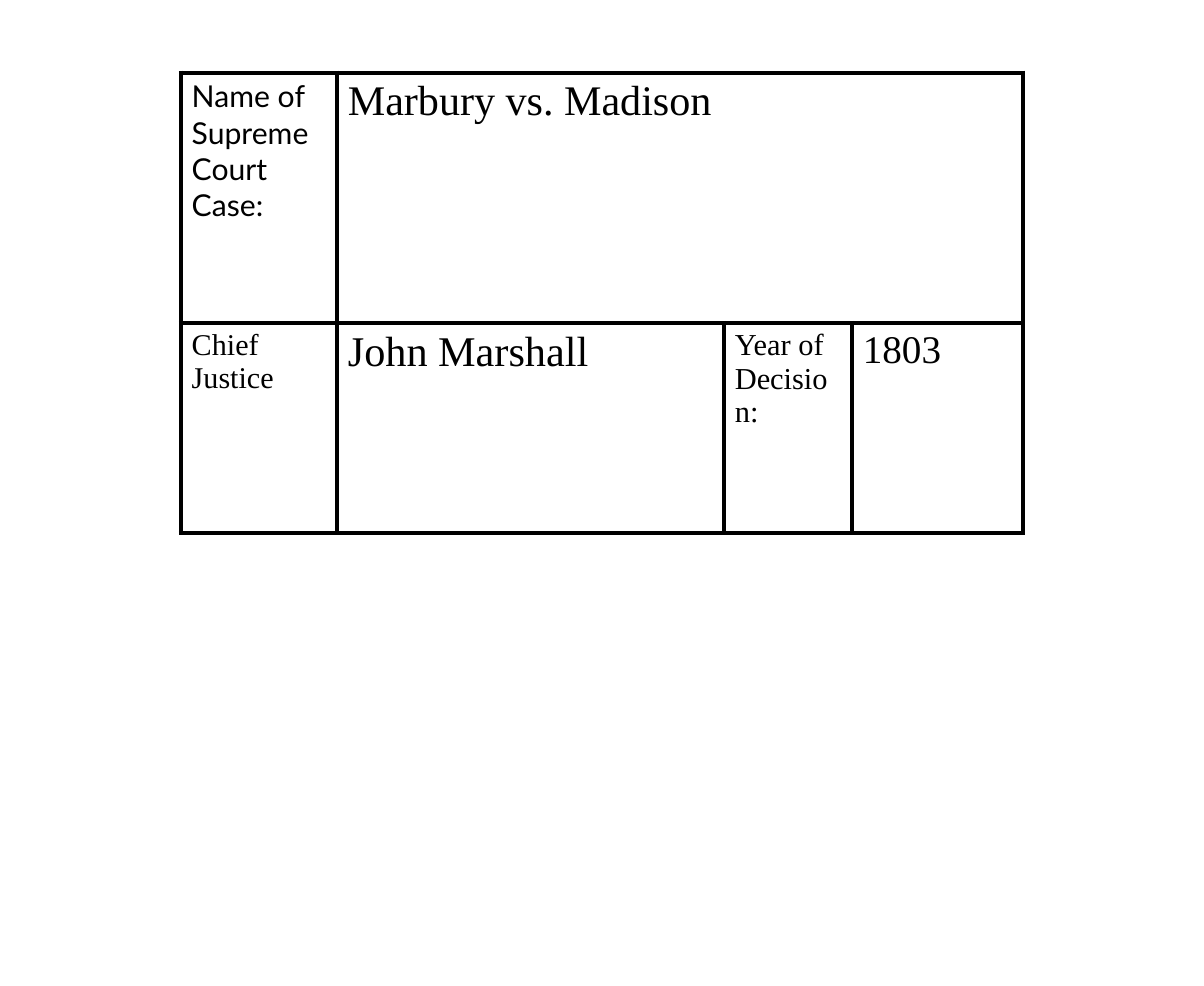
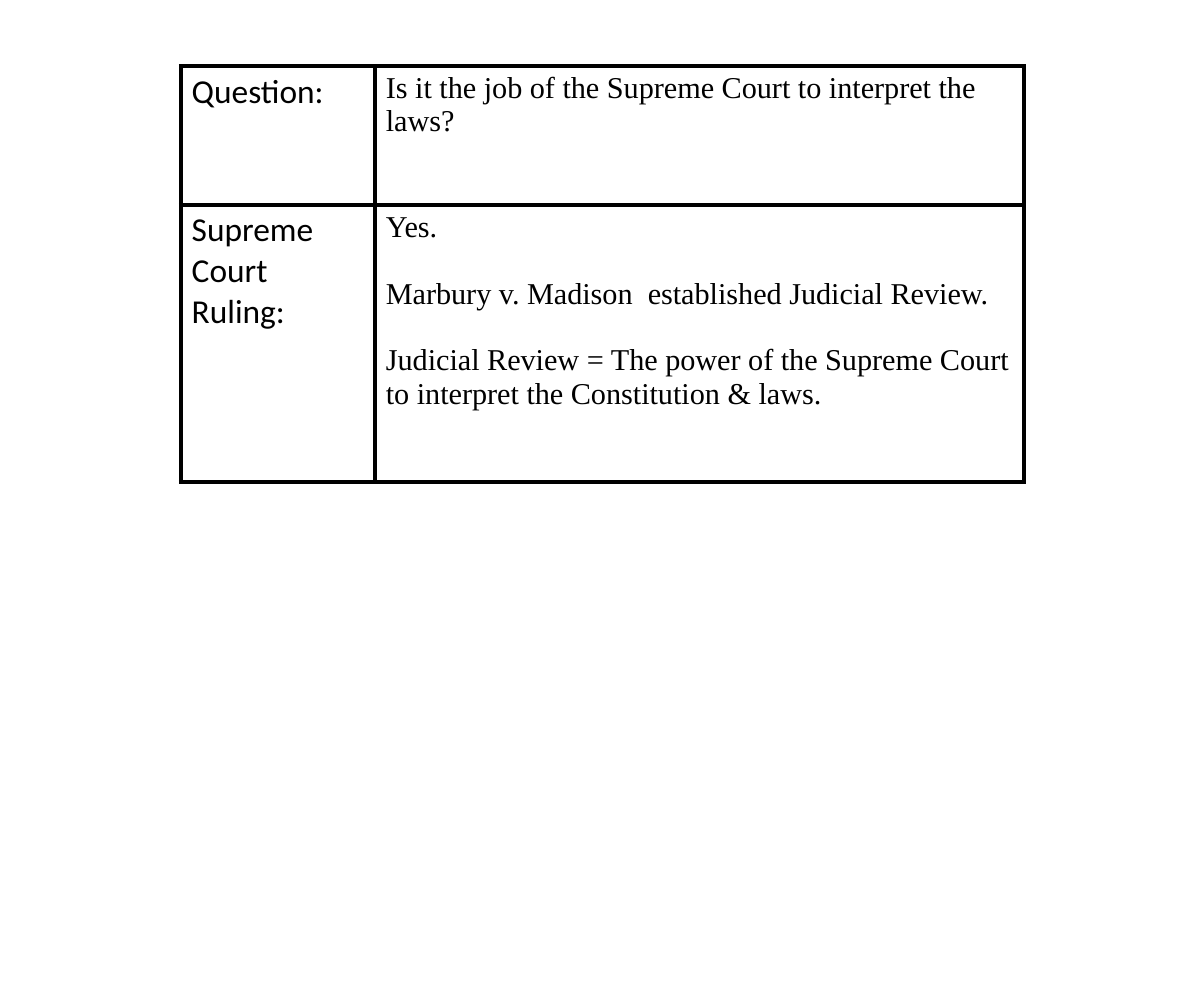
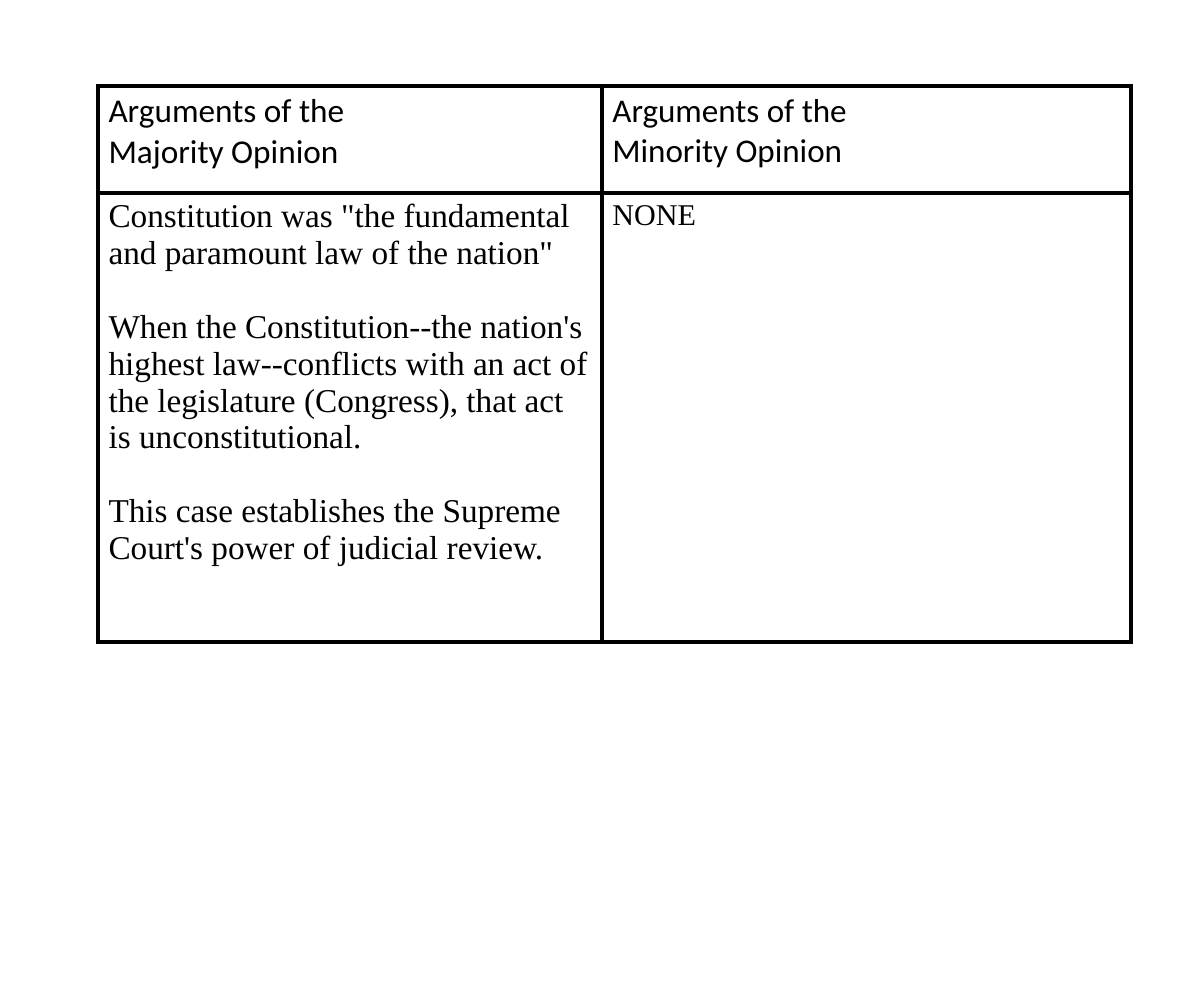
from dataclasses import dataclass

from lxml.etree import SubElement
from pptx import Presentation
from pptx.dml.color import RGBColor
from pptx.oxml.ns import qn
from pptx.util import Cm, Pt

BLACK, WHITE = "000000", "FFFFFF"
SERIF, SANS, HEADING = "Times New Roman", "Calibri", "Lato"
BORDER_POINTS = 3
SERIF_LINE = 1.107  # height of one serif line, relative to the text size
BLANK_LAYOUT = 6


@dataclass(frozen=True)
class Entry:
    """Content of one table cell; gap_lines is the space between paragraphs."""
    paragraphs: tuple[str, ...]
    size: float
    font: str = SERIF
    gap_lines: int = 0
    span: int = 1


@dataclass(frozen=True)
class Grid:
    """One slide's table, with lengths in centimetres."""
    left: float
    top: float
    columns: tuple[float, ...]
    rows: tuple[float, ...]
    entries: tuple[tuple[Entry, ...], ...]


GRIDS = (
    # Case facts
    Grid(4.24, 1.7, (3.66, 9.07, 3, 4.01), (5.87, 4.93), (
        (Entry(("Name of Supreme Court Case:",), 20, HEADING),
         Entry(("Marbury vs. Madison",), 28, span=3)),
        (Entry(("Chief Justice",), 20),
         Entry(("John Marshall",), 28.1),
         Entry(("Year of Decision:",), 20.2),
         Entry(("1803",), 26)),
    )),
    # Question and ruling
    Grid(4.24, 1.55, (4.55, 15.21), (3.25, 6.5), (
        (Entry(("Question:",), 22.2, SANS),
         Entry(("Is it the job of the Supreme Court to interpret the laws?",), 20.1)),
        (Entry(("Supreme Court Ruling:",), 22.2, SANS),
         Entry(("Yes.",
                "Marbury v. Madison  established Judicial Review.",
                "Judicial Review = The power of the Supreme Court to interpret "
                "the Constitution & laws."), 20.1, gap_lines=1)),
    )),
    # Arguments
    Grid(2.29, 2.01, (11.81, 12.42), (2.51, 10.54), (
        (Entry(("Arguments of the", "Majority Opinion"), 22.1, SANS),
         Entry(("Arguments of the", "Minority Opinion"), 22, SANS)),
        (Entry(('Constitution was "the fundamental and paramount law of the nation"',
                "When the Constitution--the nation's highest law--conflicts with an act "
                "of the legislature (Congress), that act is unconstitutional.",
                "This case establishes the Supreme Court's power of judicial review."),
               22.1, gap_lines=1),
         Entry(("NONE",), 20)),
    )),
)


def color(value: str) -> RGBColor:
    return RGBColor.from_string(value)


def write_text(frame, paragraphs: tuple[str, ...], *, size: float, font: str,
               fill: str = BLACK, gap: float = 0) -> None:
    for index, text in enumerate(paragraphs):
        para = frame.add_paragraph() if index else frame.paragraphs[0]
        para.space_before = Pt(gap if index else 0)
        span = para.add_run()
        span.text = text
        span.font.size = Pt(size)
        span.font.name = font
        span.font.color.rgb = color(fill)


def style_cell(cell) -> None:
    cell.fill.solid()
    cell.fill.fore_color.rgb = color(WHITE)
    # Borders come before the fill in the cell properties
    properties = cell._tc.get_or_add_tcPr()
    for position, side in enumerate(("lnL", "lnR", "lnT", "lnB")):
        line = SubElement(properties, qn(f"a:{side}"), w=str(Pt(BORDER_POINTS)))
        solid = SubElement(line, qn("a:solidFill"))
        SubElement(solid, qn("a:srgbClr"), val=BLACK)
        properties.insert(position, line)


def draw_grid(page, grid: Grid) -> None:
    table = page.shapes.add_table(
        len(grid.rows), len(grid.columns), Cm(grid.left), Cm(grid.top),
        Cm(sum(grid.columns)), Cm(sum(grid.rows))).table
    table.first_row = table.horz_banding = False
    for column, width in zip(table.columns, grid.columns):
        column.width = Cm(width)
    for row, height in zip(table.rows, grid.rows):
        row.height = Cm(height)
    for cell in table.iter_cells():
        style_cell(cell)
    # Text, with merged cells where an entry spans several columns
    for row_index, entries in enumerate(grid.entries):
        column_index = 0
        for entry in entries:
            cell = table.cell(row_index, column_index)
            column_index += entry.span
            if entry.span > 1:
                cell.merge(table.cell(row_index, column_index - 1))
            write_text(cell.text_frame, entry.paragraphs, size=entry.size,
                       font=entry.font, gap=entry.gap_lines * entry.size * SERIF_LINE)


def main() -> None:
    deck = Presentation()
    deck.slide_width, deck.slide_height = Cm(28.22), Cm(23.11)
    for grid in GRIDS:
        draw_grid(deck.slides.add_slide(deck.slide_layouts[BLANK_LAYOUT]), grid)
    deck.save("out.pptx")


if __name__ == "__main__":
    main()
